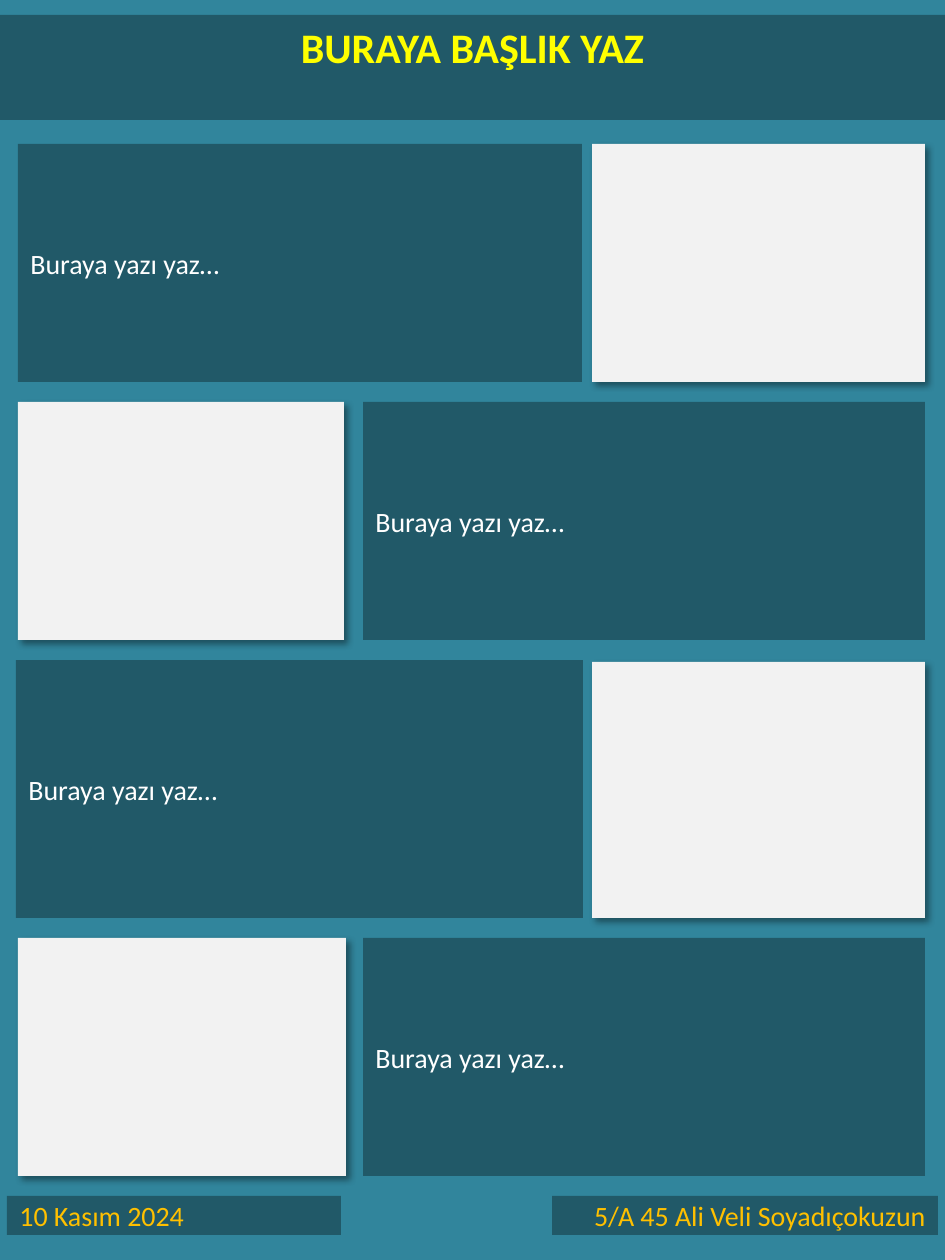
from lxml import etree
from pptx import Presentation
from pptx import util as u
from pptx.dml.color import RGBColor
from pptx.enum import shapes, text
from pptx.oxml import ns

EMU_PER_PX = 914400 / 126
SLIDE_W, SLIDE_H = 945, 1260

BACKGROUND = RGBColor(0x31, 0x85, 0x9C)
PANEL = RGBColor(0x21, 0x59, 0x68)
FRAME = RGBColor(0xF2, 0xF2, 0xF2)
WHITE = RGBColor(0xFF, 0xFF, 0xFF)
YELLOW = RGBColor(0xFF, 0xFF, 0x00)
AMBER = RGBColor(0xFF, 0xC0, 0x00)

BODY_TEXT = "Buraya yazı yaz…"
# One row each: text panel box, picture frame box (left, top, width, height)
ROWS = [
    ((18, 144, 564, 238), (592, 144, 333, 238)),
    ((363, 402, 562, 238), (18, 402, 326, 238)),
    ((16, 660, 567, 258), (592, 662, 333, 256)),
    ((363, 938, 562, 238), (18, 938, 328, 238)),
]


def px(n):
    return u.Emu(round(n * EMU_PER_PX))


def set_fill(sp, color):
    sp.fill.solid()
    sp.fill.fore_color.rgb = color


def add_box(s, box, color):
    """Add a plain rectangle without outline or shadow."""
    sp = s.shapes.add_shape(shapes.MSO_SHAPE.RECTANGLE, *map(px, box))
    set_fill(sp, color)
    sp.line.fill.background()
    sp.shadow.inherit = False
    return sp


def write(sp, wording, color, size=16, bold=False,
          align=text.PP_ALIGN.LEFT, anchor=text.MSO_ANCHOR.MIDDLE):
    tf = sp.text_frame
    tf.word_wrap = True
    tf.vertical_anchor = anchor
    p = tf.paragraphs[0]
    p.alignment = align
    r = p.add_run()
    r.text = wording
    r.font.color.rgb = color
    for name, value in {"name": "Calibri", "size": u.Pt(size), "bold": bold}.items():
        setattr(r.font, name, value)


def add_panel(s, box, wording, color, **text_format):
    write(add_box(s, box, PANEL), wording, color, **text_format)


def add_frame(s, box):
    """Add a picture frame with a soft shadow to the lower right."""
    sp = add_box(s, box, FRAME)
    effects = sp.element.spPr.find(ns.qn("a:effectLst"))
    shadow = etree.SubElement(effects, ns.qn("a:outerShdw"), {
        "blurRad": str(u.Pt(4)), "dist": str(u.Pt(3)),
        "dir": str(45 * 60000), "algn": "tl", "rotWithShape": "0"})
    tint = etree.SubElement(shadow, ns.qn("a:srgbClr"), val="000000")
    etree.SubElement(tint, ns.qn("a:alpha"), val="40000")


def add_title(s, box, wording):
    sp = s.shapes.title
    for name, value in zip(("left", "top", "width", "height"), box):
        setattr(sp, name, px(value))
    set_fill(sp, PANEL)
    write(sp, wording, YELLOW, size=24, bold=True,
          align=text.PP_ALIGN.CENTER, anchor=text.MSO_ANCHOR.TOP)
    sp.text_frame.auto_size = text.MSO_AUTO_SIZE.SHAPE_TO_FIT_TEXT


def main():
    prs = Presentation()
    prs.slide_width, prs.slide_height = px(SLIDE_W), px(SLIDE_H)
    s = prs.slides.add_slide(prs.slide_layouts.get_by_name("Title Only"))
    set_fill(s.background, BACKGROUND)

    add_title(s, (0, 15, SLIDE_W, 63), "BURAYA BAŞLIK YAZ")
    for panel, frame in ROWS:
        add_panel(s, panel, BODY_TEXT, WHITE)
        add_frame(s, frame)
    add_panel(s, (7, 1196, 334, 39), "10 Kasım 2024", AMBER)
    add_panel(s, (552, 1196, 386, 39), "5/A 45 Ali Veli Soyadıçokuzun", AMBER,
              align=text.PP_ALIGN.RIGHT)
    prs.save("out.pptx")


if __name__ == "__main__":
    main()
